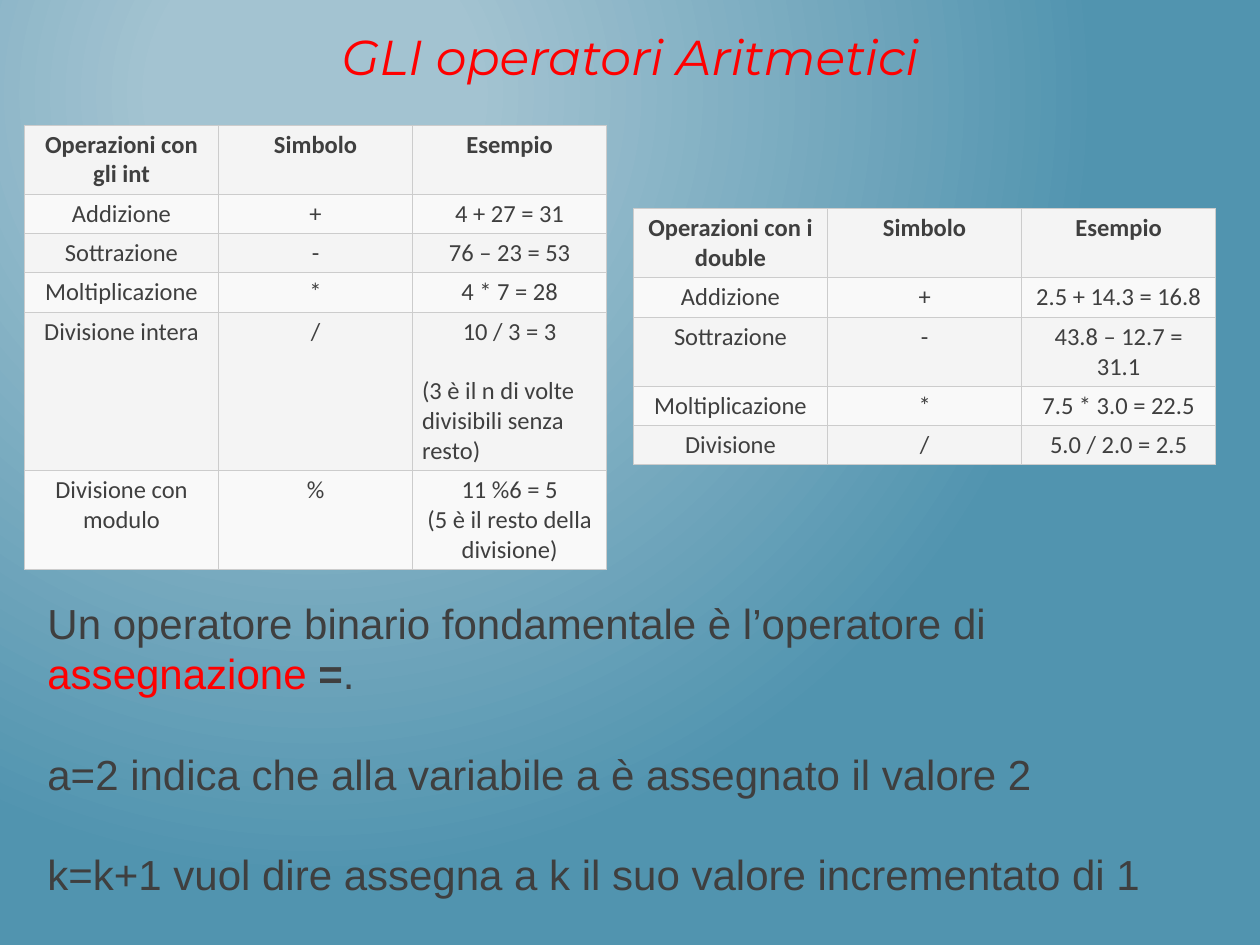
from lxml.etree import SubElement
from pptx import Presentation
from pptx.dml.color import RGBColor
from pptx.enum.text import MSO_ANCHOR as Anchor, MSO_AUTO_SIZE as AutoSize, PP_ALIGN as Align
from pptx.oxml import parse_xml
from pptx.oxml.ns import nsdecls, qn
from pptx.util import Pt

RED = RGBColor(0xFF, 0x00, 0x00)
DARK = RGBColor(0x3F, 0x3F, 0x3F)
LIGHT_BLUE = RGBColor(0xA3, 0xC3, 0xD1)
BLUE = RGBColor(0x51, 0x94, 0xAF)
BORDER = RGBColor(0xCC, 0xCC, 0xCC)
ROW_FILLS = [RGBColor(0xF4, 0xF4, 0xF4), RGBColor(0xF9, 0xF9, 0xF9)]


def format_run(run, name, size, color, bold=False):
    run.font.name = name
    run.font.size = Pt(size)
    run.font.color.rgb = color
    run.font.bold = bold


def add_borders(cell):
    properties = cell._tc.get_or_add_tcPr()
    for index, side in enumerate(["lnL", "lnR", "lnT", "lnB"]):
        properties.insert(index, parse_xml(
            f'<a:{side} {nsdecls("a")} w="{Pt(0.75)}"><a:solidFill>'
            f'<a:srgbClr val="{BORDER}"/></a:solidFill></a:{side}>'))


presentation = Presentation()
presentation.slide_width = Pt(720)
presentation.slide_height = Pt(540)
slide = presentation.slides.add_slide(presentation.slide_layouts[5])

background = slide.background.fill
background.gradient()
for stop, color, position in zip(background.gradient_stops, [LIGHT_BLUE, BLUE], [0.2, 1]):
    stop.color.rgb = color
    stop.position = position
gradient = slide.background._cSld.find(".//" + qn("a:gradFill"))
gradient.remove(gradient.find(qn("a:lin")))
circle = SubElement(gradient, qn("a:path"), {"path": "circle"})
SubElement(circle, qn("a:fillToRect"), l="50000", t="20000", r="100000", b="100000")

title = slide.shapes.title
title.left, title.top, title.width, title.height = Pt(0), Pt(11.5), Pt(720), Pt(49)
title.text_frame.text = "GLI operatori Aritmetici"
title.text_frame.auto_size = AutoSize.NONE
title.text_frame.vertical_anchor = Anchor.TOP
title_paragraph = title.text_frame.paragraphs[0]
title_paragraph.alignment = Align.CENTER
format_run(title_paragraph.runs[0], "Montserrat", 28, RED)
title_paragraph.runs[0].font.italic = True

integer_rows = [
    ("Operazioni con gli int", "Simbolo", "Esempio"),
    ("Addizione", "+", "4 + 27 = 31"),
    ("Sottrazione", "-", "76 – 23 = 53"),
    ("Moltiplicazione", "*", "4 * 7 = 28"),
    ("Divisione intera", "/", "10 / 3 = 3\n(3 è il n di volte divisibili senza resto)"),
    ("Divisione con modulo", "%", "11 %6 = 5\v(5 è il resto della divisione)"),
]
double_rows = [
    ("Operazioni con i double", "Simbolo", "Esempio"),
    ("Addizione", "+", "2.5 + 14.3 = 16.8"),
    ("Sottrazione", "-", "43.8 – 12.7 = 31.1"),
    ("Moltiplicazione", "*", "7.5 * 3.0 = 22.5"),
    ("Divisione", "/", "5.0 / 2.0 = 2.5"),
]
tables = [
    (14, 71.5, integer_rows, [38, 21.6, 21.6, 21.6, 87, 55]),
    (362, 119.3, double_rows, [38, 21.6, 21.6, 21.6, 21.6]),
]
for left, top, rows, heights in tables:
    frame = slide.shapes.add_table(len(rows), 3, Pt(left), Pt(top), Pt(332.7), Pt(sum(heights)))
    table = frame.table
    for column in table.columns:
        column.width = Pt(110.9)
    for row_index, (values, height) in enumerate(zip(rows, heights)):
        table.rows[row_index].height = Pt(height)
        for cell, value in zip(table.rows[row_index].cells, values):
            cell.text = value
            cell.margin_left = cell.margin_right = Pt(5.4)
            cell.margin_top = cell.margin_bottom = Pt(2.7)
            cell.fill.solid()
            cell.fill.fore_color.rgb = ROW_FILLS[row_index % 2]
            add_borders(cell)
            for paragraph in cell.text_frame.paragraphs:
                paragraph.alignment = Align.CENTER
                for run in paragraph.runs:
                    format_run(run, "Calibri", 14, DARK, bold=row_index == 0)
            for note in cell.text_frame.paragraphs[1:]:
                note.alignment = Align.LEFT
                note.space_before = Pt(17)

explanation = slide.shapes.add_textbox(Pt(20), Pt(337.7), Pt(686), Pt(181.5))
explanation.text_frame.word_wrap = True
explanation_paragraphs = [
    [("Un operatore binario fondamentale è l’operatore di ", DARK, False),
     ("assegnazione ", RED, False), ("=", DARK, True), (".", DARK, False)],
    [("a=2 indica che alla variabile a è assegnato il valore 2", DARK, False)],
    [("k=k+1 vuol dire assegna a k il suo valore incrementato di 1", DARK, False)],
]
for index, pieces in enumerate(explanation_paragraphs):
    frame = explanation.text_frame
    paragraph = frame.add_paragraph() if index else frame.paragraphs[0]
    paragraph.space_before = Pt(28.7 if index else 0)
    for text, color, bold in pieces:
        run = paragraph.add_run()
        run.text = text
        format_run(run, "Arial", 24, color, bold)

presentation.save("out.pptx")
